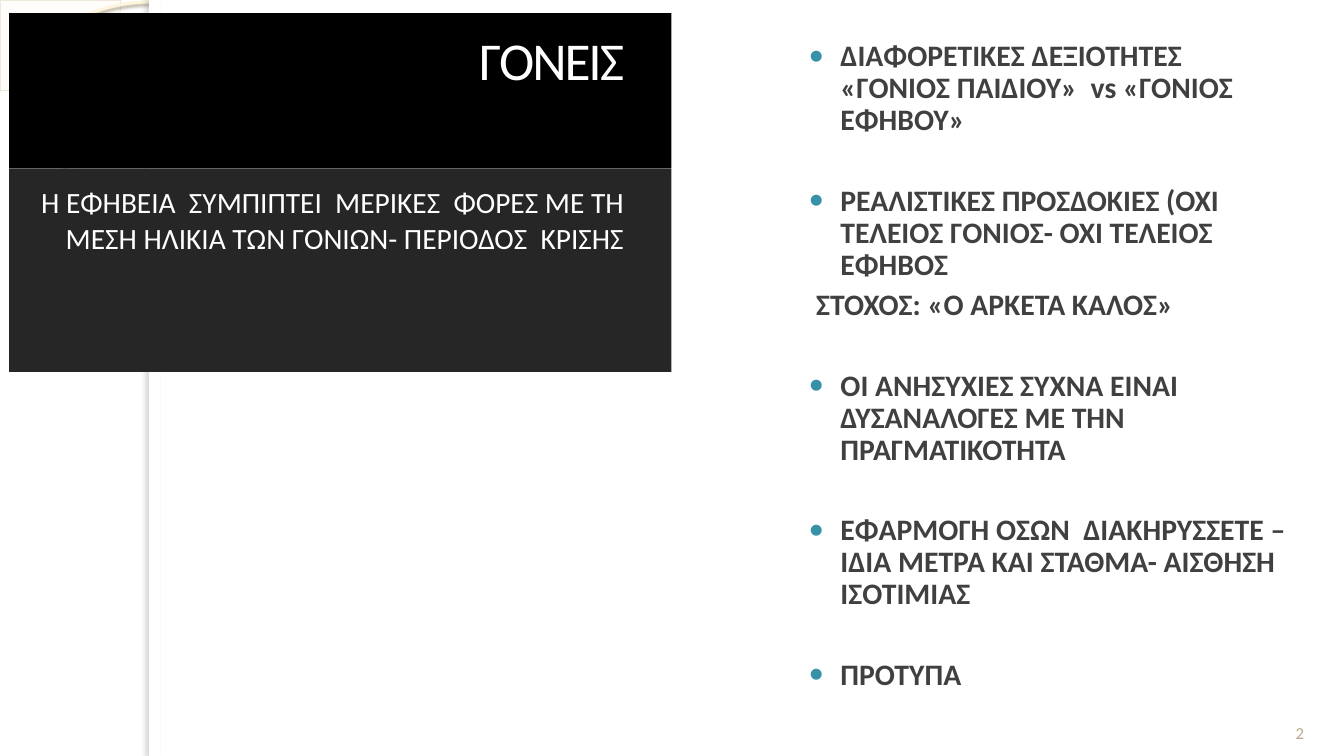
from lxml import etree
from pptx import Presentation
from pptx import util as u
from pptx.dml.color import RGBColor
from pptx.enum import shapes, text
from pptx.oxml import ns

Cm, Pt = u.Cm, u.Pt
FONT = "Calibri"
COLORS = {
    "white": "FFFFFF", "title": "000000", "subtitle": "262626",
    "advice": "404040", "bullet": "3891A7", "number": "B6A98A",
    "pie": "FEFAF4", "pie_line": "D3C39F", "ring": "FFF5DE",
    "ring_shadow": "B0A68F", "bar_shadow": "736F63",
}
HEADING = "ΓΟΝΕΙΣ"
SUBHEADING = ("Η ΕΦΗΒΕΙΑ  ΣΥΜΠΙΠΤΕΙ  ΜΕΡΙΚΕΣ  ΦΟΡΕΣ ΜΕ ΤΗ   ΜΕΣΗ ΗΛΙΚΙΑ "
              "ΤΩΝ ΓΟΝΙΩΝ- ΠΕΡΙΟΔΟΣ  ΚΡΙΣΗΣ")
GOAL = "ΣΤΟΧΟΣ: «Ο ΑΡΚΕΤΑ ΚΑΛΟΣ»"
ADVICE = [
    "ΔΙΑΦΟΡΕΤΙΚΕΣ ΔΕΞΙΟΤΗΤΕΣ «ΓΟΝΙΟΣ ΠΑΙΔΙΟΥ»  vs «ΓΟΝΙΟΣ  ΕΦΗΒΟΥ»",
    "ΡΕΑΛΙΣΤΙΚΕΣ ΠΡΟΣΔΟΚΙΕΣ (ΟΧΙ ΤΕΛΕΙΟΣ ΓΟΝΙΟΣ- ΟΧΙ ΤΕΛΕΙΟΣ ΕΦΗΒΟΣ",
    GOAL,
    "ΟΙ ΑΝΗΣΥΧΙΕΣ ΣΥΧΝΑ ΕΙΝΑΙ ΔΥΣΑΝΑΛΟΓΕΣ ΜΕ ΤΗΝ ΠΡΑΓΜΑΤΙΚΟΤΗΤΑ",
    "ΕΦΑΡΜΟΓΗ ΟΣΩΝ  ΔΙΑΚΗΡΥΣΣΕΤΕ – ΙΔΙΑ ΜΕΤΡΑ ΚΑΙ ΣΤΑΘΜΑ- ΑΙΣΘΗΣΗ ΙΣΟΤΙΜΙΑΣ",
    "ΠΡΟΤΥΠΑ",
]


def rgb(name):
    return RGBColor.from_string(COLORS[name])


def sub(parent, tag, **attributes):
    return etree.SubElement(parent, ns.qn(tag), attributes)


def add_figure(slide, preset, box, fill=None, line=None, weight=0):
    figure = slide.shapes.add_shape(preset, *map(Cm, box))
    figure.shadow.inherit = False
    if fill:
        figure.fill.solid()
        figure.fill.fore_color.rgb = rgb(fill)
    else:
        figure.fill.background()
    if line:
        figure.line.color.rgb = rgb(line)
        figure.line.width = Pt(weight)
    else:
        figure.line.fill.background()
    return figure


def cast_shadow(figure, color, opacity, blur, distance, angle):
    """Opacity in percent, blur and distance in points, angle in degrees."""
    effects = figure._element.spPr.find(ns.qn("a:effectLst"))
    shadow = sub(effects, "a:outerShdw", blurRad=str(Pt(blur)), dist=str(Pt(distance)),
                 dir=str(angle * 60000), algn="tl", rotWithShape="0")
    tint = sub(shadow, "a:srgbClr", val=COLORS[color])
    sub(tint, "a:alpha", val=str(opacity * 1000))


def add_backdrop(slide, box):
    left, top, width, height = box
    kinds = shapes.MSO_SHAPE
    pie = add_figure(slide, kinds.PIE, (left - 3.02, top - 2.26, 6.07, 4.55),
                     "pie", "pie_line", 0.25)
    pie.adjustments[0], pie.adjustments[1] = 0, 54.02
    pie_color = pie._element.spPr.find(".//" + ns.qn("a:srgbClr"))
    sub(pie_color, "a:alpha", val="33000")
    ring = add_figure(slide, kinds.OVAL, (left + 0.64, top + 0.05, 6.3, 4.72),
                      line="ring", weight=2.15)
    cast_shadow(ring, "ring_shadow", 85, 2, 2, 90)
    margin = 3.76
    add_figure(slide, kinds.RECTANGLE, (left + margin, top, width - margin, height), "white")
    bar = add_figure(slide, kinds.RECTANGLE, (left + margin, top, 0.28, height), "white")
    cast_shadow(bar, "bar_shadow", 25, 3, 3, 180)


def place(holder, box, insets, anchor):
    """Moves a text holder to its box and sets its frame, in front of the rest."""
    holder.left, holder.top, holder.width, holder.height = map(Cm, box)
    frame = holder.text_frame
    frame.word_wrap = True
    frame.auto_size = text.MSO_AUTO_SIZE.NONE
    frame.vertical_anchor = anchor
    (frame.margin_left, frame.margin_top,
     frame.margin_right, frame.margin_bottom) = map(Cm, insets)
    holder._element.getparent().append(holder._element)
    return frame


def style(paragraph, size, color, align, bold=False, before=0, spacing=1.0):
    paragraph.alignment = align
    paragraph.line_spacing = spacing
    paragraph.space_before = Pt(before)
    for run in paragraph.runs:
        run.font.name = FONT
        run.font.size = Pt(size)
        run.font.bold = bold
        run.font.color.rgb = rgb(color)


def fill_heading(title, subtitle, box):
    left, top, width, height = box
    title_height = 3.91
    parts = [
        (title, HEADING, "title", (left, top, width, title_height),
         (0.79, 0.13, 1.19, 1.94), text.MSO_ANCHOR.BOTTOM, 38),
        (subtitle, SUBHEADING, "subtitle",
         (left, top + title_height, width, height - title_height),
         (0.79, 0.41, 1.19, 0.13), text.MSO_ANCHOR.TOP, 21),
    ]
    for holder, wording, fill, panel, insets, anchor, size in parts:
        frame = place(holder, panel, insets, anchor)
        frame.text = wording
        style(frame.paragraphs[0], size, "white", text.PP_ALIGN.RIGHT)
        holder.fill.solid()
        holder.fill.fore_color.rgb = rgb(fill)
    title.text_frame.paragraphs[0].runs[0].font._element.set("spc", "-150")


def fill_advice(body, box):
    frame = place(body, box, (0.25, 0.13, 0.25, 0.93), text.MSO_ANCHOR.BOTTOM)
    frame.text = "\n".join(ADVICE)
    for index, paragraph in enumerate(frame.paragraphs):
        is_goal = paragraph.text == GOAL
        before = 6 if is_goal or index == 0 else 34.5
        style(paragraph, 21.2, "advice", text.PP_ALIGN.LEFT, True, before, 0.9)
        properties = paragraph._p.get_or_add_pPr()
        properties.set("marL", str(Cm(1.02)))
        properties.set("indent", str(Cm(-0.61 if is_goal else -0.79)))
        if is_goal:
            sub(properties, "a:buNone")
            continue
        sub(sub(properties, "a:buClr"), "a:srgbClr", val=COLORS["bullet"])
        sub(properties, "a:buSzPct", val="80000")
        sub(properties, "a:buFont", typeface=FONT)
        sub(properties, "a:buChar", char="●")


def add_page_number(slide, box):
    number = slide.shapes.add_textbox(*map(Cm, box))
    frame = place(number, box, (0.25, 0.13, 0.25, 0.13), text.MSO_ANCHOR.BOTTOM)
    frame.text = "2"
    style(frame.paragraphs[0], 12, "number", text.PP_ALIGN.CENTER)


def build_parents_slide(deck, box):
    left, top, width, height = box
    caption_layout = deck.slide_layouts.get_by_name("Content with Caption")
    slide = deck.slides.add_slide(caption_layout)
    slide.background.fill.solid()
    slide.background.fill.fore_color.rgb = rgb("white")
    title, body, subtitle = slide.placeholders
    add_backdrop(slide, box)
    fill_heading(title, subtitle, (left + 0.23, top + 0.33, 16.69, 9.04))
    fill_advice(body, (left + 19.91, top + 0.53, 12.9, 17.83))
    add_page_number(slide, (left + width - 1.96, top + height - 1.52, 1.7, 1.32))


def main():
    deck = Presentation()
    width, height = 33.87, 19.05
    deck.slide_width, deck.slide_height = Cm(width), Cm(height)
    build_parents_slide(deck, (0, 0, width, height))
    deck.save("out.pptx")


if __name__ == "__main__":
    main()
